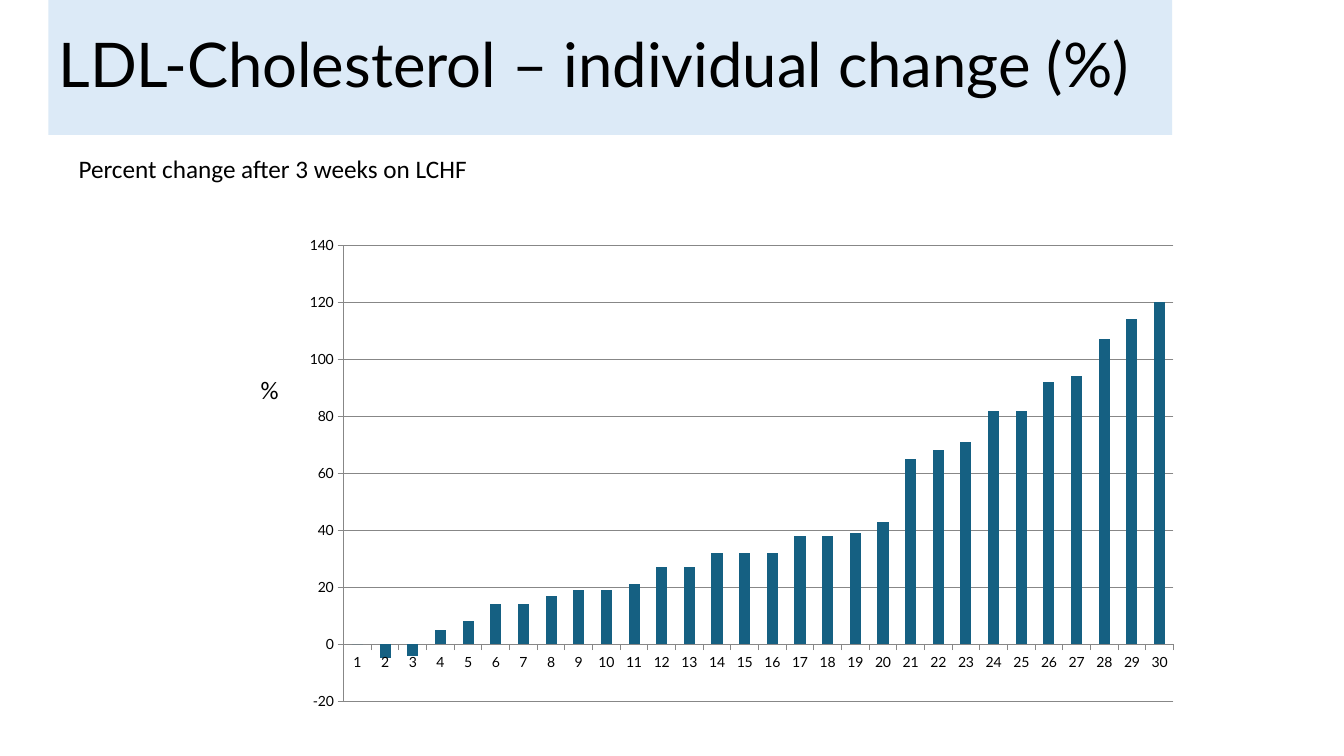
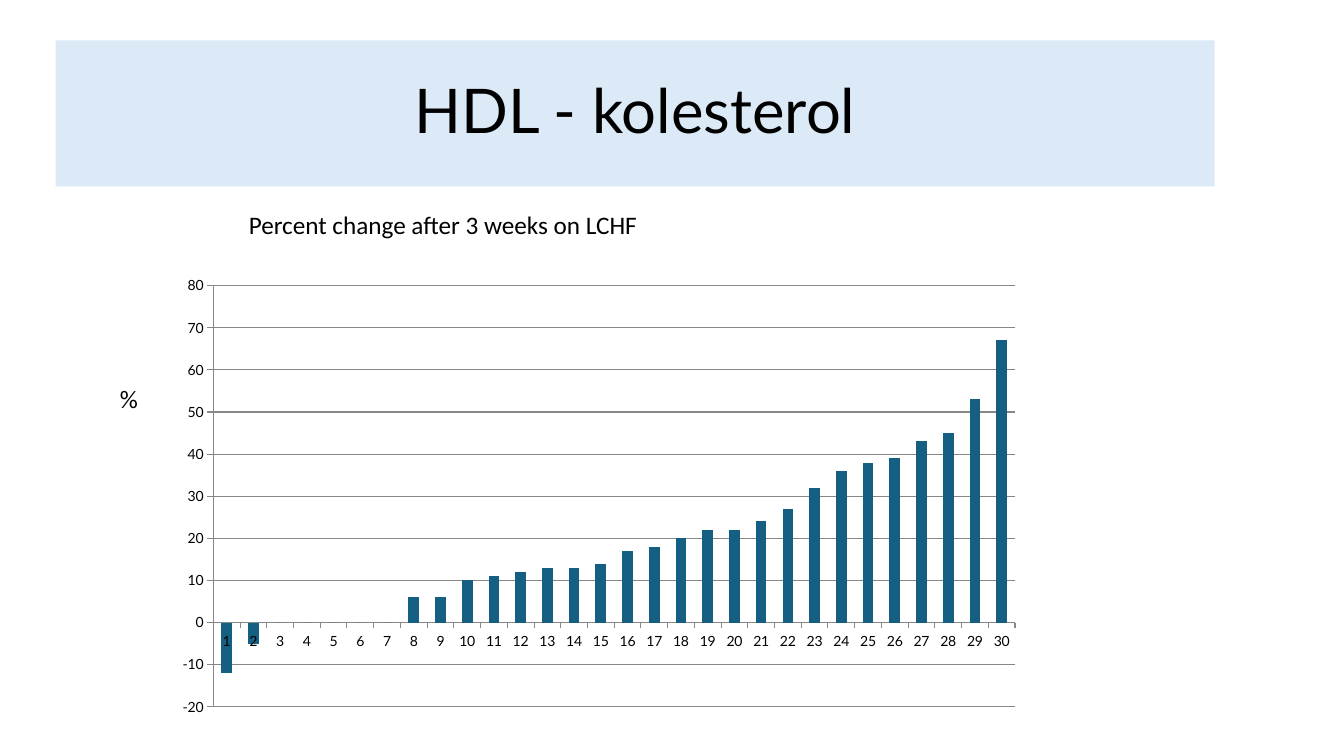
from dataclasses import dataclass

from lxml.etree import SubElement
from pptx import Presentation
from pptx.chart.axis import _BaseAxis
from pptx.chart.chart import Chart
from pptx.chart.data import CategoryChartData
from pptx.dml.color import RGBColor
from pptx.enum.chart import XL_CHART_TYPE, XL_TICK_MARK
from pptx.enum.text import MSO_ANCHOR, MSO_AUTO_SIZE, PP_ALIGN
from pptx.oxml.ns import qn
from pptx.slide import Slide
from pptx.util import Cm, Pt


@dataclass(frozen=True)
class Theme:
    text: RGBColor = RGBColor(0x00, 0x00, 0x00)
    band: RGBColor = RGBColor(0xDC, 0xEA, 0xF7)
    bar: RGBColor = RGBColor(0x15, 0x60, 0x82)
    line: RGBColor = RGBColor(0x87, 0x87, 0x87)
    title_font: str = "Lato"
    body_font: str = "Calibri"
    title_size: Pt = Pt(44)
    body_size: Pt = Pt(18)
    chart_size: Pt = Pt(10)


@dataclass(frozen=True)
class Box:
    left: float
    top: float
    width: float
    height: float

    def lengths(self) -> tuple[Cm, Cm, Cm, Cm]:
        return Cm(self.left), Cm(self.top), Cm(self.width), Cm(self.height)


@dataclass(frozen=True)
class ChangeSlide:
    title: str
    align: PP_ALIGN
    title_box: Box
    caption_box: Box
    unit_box: Box
    chart_box: Box
    plot: Box
    maximum: int
    step: int
    values: tuple[int, ...]


THEME = Theme()
CAPTION = "Percent change after 3 weeks on LCHF"
MINIMUM = -20

SLIDES = (
    ChangeSlide(
        title="LDL-Cholesterol – individual change (%)",
        align=PP_ALIGN.LEFT,
        title_box=Box(1.22, 0, 28.32, 3.4),
        caption_box=Box(1.73, 3.73, 12.93, 1.02),
        unit_box=Box(6.32, 9.32, 1.6, 1.02),
        chart_box=Box(7.39, 5.72, 22.66, 12.4),
        plot=Box(0.056, 0.037, 0.923, 0.927),
        maximum=140,
        step=20,
        values=(0, -5, -4, 5, 8, 14, 14, 17, 19, 19, 21, 27, 27, 32, 32,
                32, 38, 38, 39, 43, 65, 68, 71, 82, 82, 92, 94, 107, 114, 120),
    ),
    ChangeSlide(
        title="HDL - kolesterol",
        align=PP_ALIGN.CENTER,
        title_box=Box(1.4, 1.02, 29.21, 3.68),
        caption_box=Box(6.02, 5.16, 12.62, 1.02),
        unit_box=Box(2.77, 9.53, 1.6, 1.02),
        chart_box=Box(4.37, 6.63, 21.89, 11.4),
        plot=Box(0.046, 0.05, 0.923, 0.931),
        maximum=80,
        step=10,
        values=(-12, -5, 0, 0, 0, 0, 0, 6, 6, 10, 11, 12, 13, 13, 14,
                17, 18, 20, 22, 22, 24, 27, 32, 36, 38, 39, 43, 45, 53, 67),
    ),
)


def add_title(s: Slide, text: str, box: Box, align: PP_ALIGN) -> None:
    sp = s.shapes.title
    sp.left, sp.top, sp.width, sp.height = box.lengths()
    sp.fill.solid()
    sp.fill.fore_color.rgb = THEME.band
    tf = sp.text_frame
    tf.text = text
    tf.word_wrap = True
    tf.auto_size = MSO_AUTO_SIZE.NONE
    tf.vertical_anchor = MSO_ANCHOR.MIDDLE
    p = tf.paragraphs[0]
    p.alignment = align
    p.line_spacing = 0.9
    p.font.name = THEME.title_font
    p.font.size = THEME.title_size
    p.font.color.rgb = THEME.text


def add_label(s: Slide, text: str, box: Box) -> None:
    tf = s.shapes.add_textbox(*box.lengths()).text_frame
    tf.text = text
    tf.word_wrap = True
    tf.auto_size = MSO_AUTO_SIZE.SHAPE_TO_FIT_TEXT
    p = tf.paragraphs[0]
    p.font.name = THEME.body_font
    p.font.size = THEME.body_size
    p.font.color.rgb = THEME.text


def style_axis(axis: _BaseAxis) -> None:
    axis.major_tick_mark = XL_TICK_MARK.OUTSIDE
    axis.minor_tick_mark = XL_TICK_MARK.NONE
    axis.format.line.color.rgb = THEME.line
    axis.format.line.width = Pt(0.75)


def set_plot_area(chart: Chart, plot: Box) -> None:
    area = chart.plots[0]._element.getparent()
    layout = area.find(qn("c:layout"))
    if layout is None:
        layout = SubElement(area, qn("c:layout"))
        area.insert(0, layout)
    manual = SubElement(layout, qn("c:manualLayout"))
    settings = (("layoutTarget", "inner"), ("xMode", "edge"), ("yMode", "edge"),
                ("x", plot.left), ("y", plot.top), ("w", plot.width), ("h", plot.height))
    for tag, value in settings:
        SubElement(manual, qn(f"c:{tag}")).set("val", str(value))


def add_change_chart(s: Slide, item: ChangeSlide) -> None:
    data = CategoryChartData(number_format="0")
    data.categories = [str(n) for n in range(1, len(item.values) + 1)]
    data.add_series("Series 1", item.values)
    chart = s.shapes.add_chart(
        XL_CHART_TYPE.COLUMN_CLUSTERED, *item.chart_box.lengths(), data).chart
    chart.has_legend = False
    chart.has_title = False
    chart.font.name = THEME.title_font
    chart.font.size = THEME.chart_size
    chart.font.color.rgb = THEME.text

    bars = chart.plots[0]
    bars.gap_width = 150
    bars.vary_by_categories = False
    series = bars.series[0]
    series.invert_if_negative = False
    series.format.fill.solid()
    series.format.fill.fore_color.rgb = THEME.bar

    style_axis(chart.category_axis)
    axis = chart.value_axis
    style_axis(axis)
    axis.minimum_scale = MINIMUM
    axis.maximum_scale = item.maximum
    axis.major_unit = item.step
    axis.tick_labels.number_format = "0"
    axis.tick_labels.number_format_is_linked = False
    axis.has_major_gridlines = True
    axis.major_gridlines.format.line.color.rgb = THEME.line
    axis.major_gridlines.format.line.width = Pt(0.75)
    set_plot_area(chart, item.plot)


def main() -> None:
    prs = Presentation()
    prs.slide_width, prs.slide_height = Cm(33.87), Cm(19.05)
    title_only = prs.slide_layouts.get_by_name("Title Only")
    for item in SLIDES:
        s = prs.slides.add_slide(title_only)
        add_title(s, item.title, item.title_box, item.align)
        add_change_chart(s, item)
        add_label(s, CAPTION, item.caption_box)
        add_label(s, "%", item.unit_box)
    prs.save("out.pptx")


if __name__ == "__main__":
    main()
